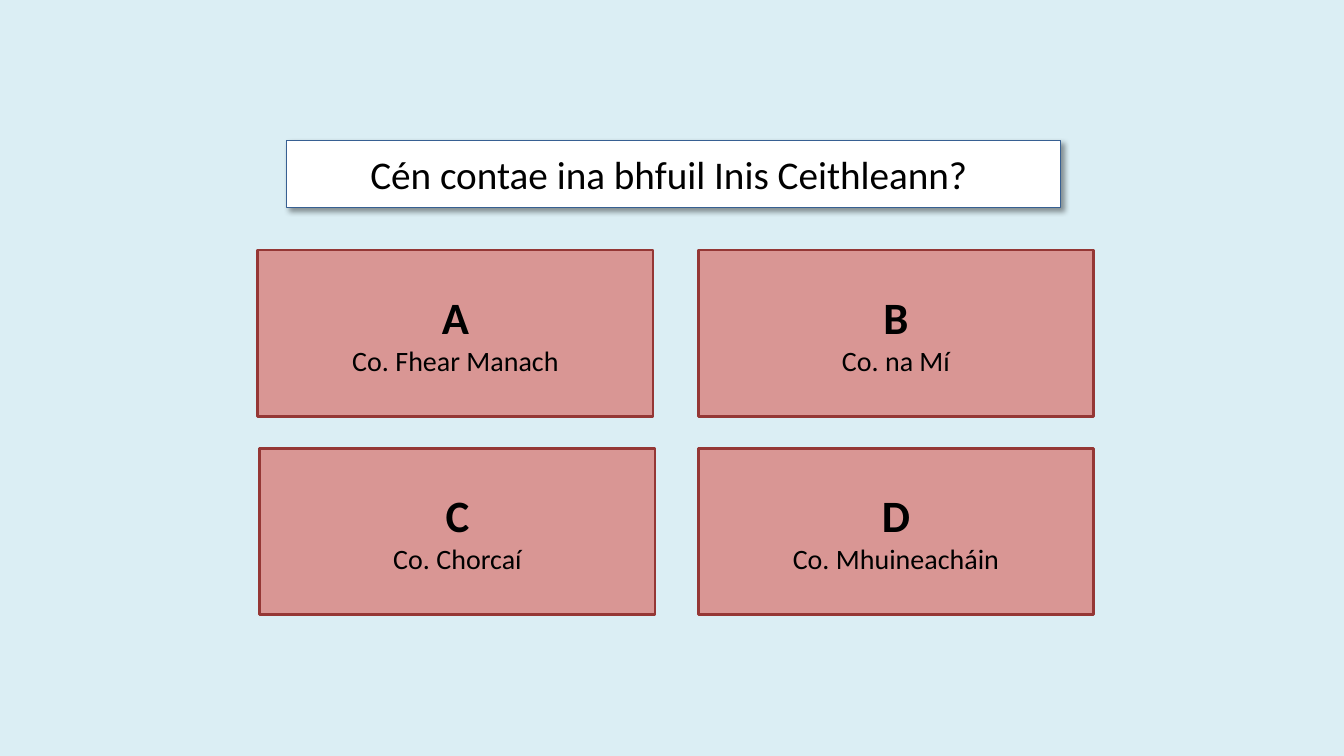
from dataclasses import dataclass

from lxml import etree
from pptx import Presentation
from pptx.dml.color import RGBColor
from pptx.enum.shapes import MSO_SHAPE
from pptx.enum.text import MSO_ANCHOR, MSO_AUTO_SIZE, PP_ALIGN
from pptx.oxml.ns import qn
from pptx.util import Cm, Pt

RECTANGLE = MSO_SHAPE.RECTANGLE
MIDDLE = MSO_ANCHOR.MIDDLE
CENTER = PP_ALIGN.CENTER
NO_AUTOFIT = MSO_AUTO_SIZE.NONE
TITLE_ONLY = 5


@dataclass(frozen=True)
class Theme:
    font: str = "Calibri"
    background: str = "DBEEF4"
    text: str = "000000"
    question_fill: str = "FFFFFF"
    question_line: str = "376092"
    answer_fill: str = "D99694"
    answer_line: str = "953735"
    shadow: str = "000000"
    question_size: float = 28
    letter_size: float = 32
    answer_size: float = 20


@dataclass(frozen=True)
class Answer:
    letter: str
    county: str
    column: int
    row: int
    nudge: float = 0


THEME = Theme()
QUESTION = "Cén contae ina bhfuil Inis Ceithleann? "
ANSWERS = [
    Answer("A", "Co. Fhear Manach", 0, 0),
    Answer("B", "Co. na Mí", 1, 0),
    Answer("C", "Co. Chorcaí", 0, 1, nudge=0.05),
    Answer("D", "Co. Mhuineacháin", 1, 1),
]

# Answer grid, in centimetres
GRID_LEFT, GRID_TOP = 6.5, 6.3
COLUMN_STEP, ROW_STEP = 11.1, 5
ANSWER_WIDTH, ANSWER_HEIGHT = 9.96, 4.19


def style_box(shape, fill: str, line: str, line_width: float) -> None:
    shape.fill.solid()
    shape.fill.fore_color.rgb = RGBColor.from_string(fill)
    shape.line.color.rgb = RGBColor.from_string(line)
    shape.line.width = Pt(line_width)
    shape.text_frame.vertical_anchor = MIDDLE
    shape.text_frame.word_wrap = True


def style_paragraph(paragraph, size: float, bold: bool = False) -> None:
    paragraph.alignment = CENTER
    for run in paragraph.runs:
        run.font.name = THEME.font
        run.font.size = Pt(size)
        run.font.bold = bold
        run.font.color.rgb = RGBColor.from_string(THEME.text)


def add_shadow(shape) -> None:
    effects = etree.SubElement(shape.element.spPr, qn("a:effectLst"))
    shadow = etree.SubElement(
        effects, qn("a:outerShdw"), blurRad=str(Pt(4)), dist=str(Pt(3)),
        dir=str(45 * 60000), algn="tl", rotWithShape="0")
    color = etree.SubElement(shadow, qn("a:srgbClr"), val=THEME.shadow)
    etree.SubElement(color, qn("a:alpha"), val="40000")


def format_question(title) -> None:
    title.left, title.top = Cm(7.21), Cm(3.53)
    title.width, title.height = Cm(19.51), Cm(1.7)
    title.text_frame.text = QUESTION
    title.text_frame.auto_size = NO_AUTOFIT
    style_box(title, THEME.question_fill, THEME.question_line, 0.75)
    add_shadow(title)
    paragraph = title.text_frame.paragraphs[0]
    paragraph.space_before = Pt(5.6)
    style_paragraph(paragraph, THEME.question_size)


def add_answer(slide, answer: Answer) -> None:
    shape = slide.shapes.add_shape(
        RECTANGLE,
        Cm(GRID_LEFT + answer.column * COLUMN_STEP + answer.nudge),
        Cm(GRID_TOP + answer.row * ROW_STEP),
        Cm(ANSWER_WIDTH), Cm(ANSWER_HEIGHT))
    shape.shadow.inherit = False
    style_box(shape, THEME.answer_fill, THEME.answer_line, 2)
    shape.text_frame.text = f"{answer.letter}\n{answer.county}"
    letter, county = shape.text_frame.paragraphs
    style_paragraph(letter, THEME.letter_size, bold=True)
    style_paragraph(county, THEME.answer_size)


def main() -> None:
    presentation = Presentation()
    presentation.slide_width, presentation.slide_height = Cm(33.87), Cm(19.05)
    slide = presentation.slides.add_slide(presentation.slide_layouts[TITLE_ONLY])

    # Background
    background = slide.background.fill
    background.solid()
    background.fore_color.rgb = RGBColor.from_string(THEME.background)

    # Question and its four answers
    format_question(slide.shapes.title)
    for answer in ANSWERS:
        add_answer(slide, answer)

    presentation.save("out.pptx")


if __name__ == "__main__":
    main()
